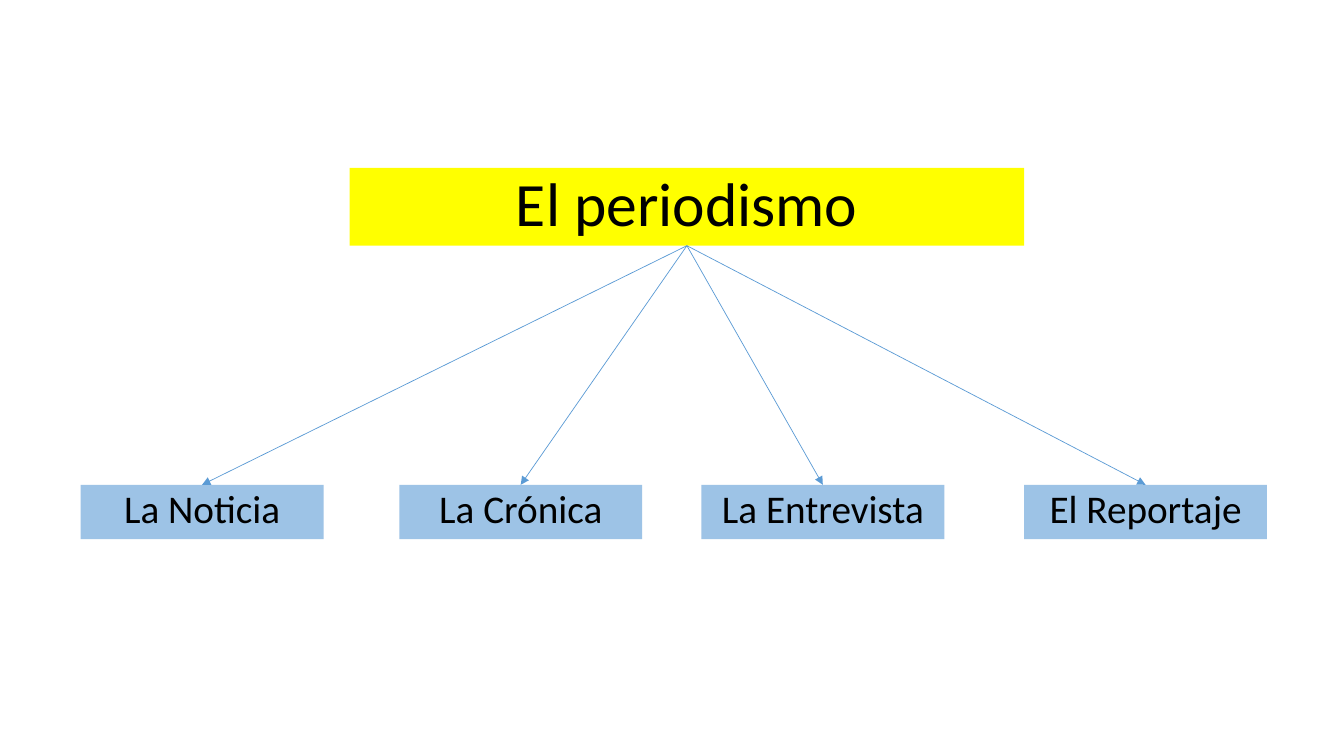
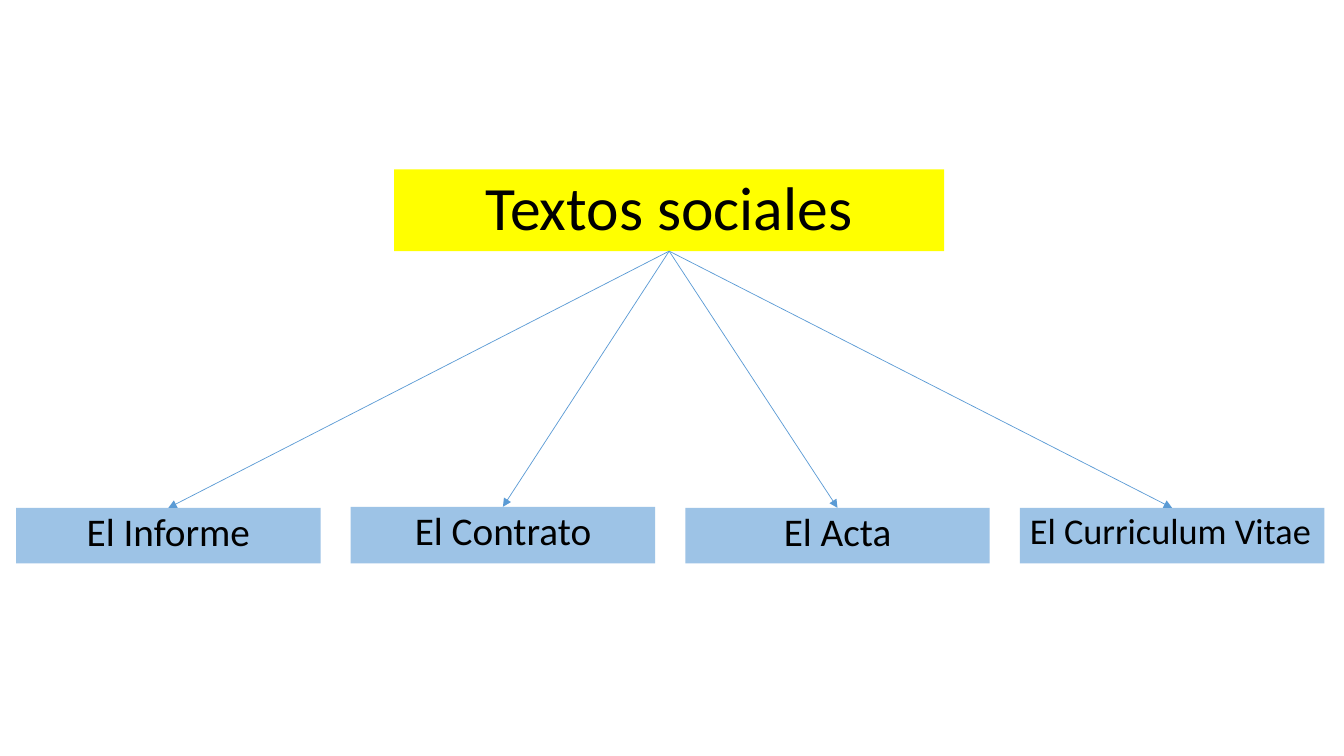
import pptx
import pptx.dml.color
import pptx.enum.shapes
import pptx.enum.text
import pptx.oxml.ns
import pptx.util
from lxml import etree

Pt = pptx.util.Pt
ALIGN = pptx.enum.text.PP_ALIGN
ANCHOR = pptx.enum.text.MSO_ANCHOR


def color(hex_string):
    return pptx.dml.color.RGBColor.from_string(hex_string)


class ConceptMap:
    """Holds the shared style and the slide being drawn."""

    FONT = "Calibri"
    TEXT = "000000"
    TITLE_FILL = "FFFF00"
    TOPIC_FILL = "9DC3E6"
    ARROW = "5B9BD5"
    TITLE_SIZE = 44
    TOPIC_SIZE = 28

    def __init__(self, presentation):
        self.presentation = presentation
        self.slide = None

    def add_slide(self):
        blank_layout = self.presentation.slide_layouts[6]
        self.slide = self.presentation.slides.add_slide(blank_layout)

    def box(self, text, bounds, fill, size, anchor, align=ALIGN.CENTER, space_before=0):
        shape = self.slide.shapes.add_shape(
            pptx.enum.shapes.MSO_SHAPE.RECTANGLE, *map(Pt, bounds))
        shape.shadow.inherit = False
        shape.fill.solid()
        shape.fill.fore_color.rgb = color(fill)
        shape.line.fill.background()
        frame = shape.text_frame
        frame.word_wrap = True
        frame.vertical_anchor = anchor
        paragraph = frame.paragraphs[0]
        paragraph.alignment = align
        paragraph.line_spacing = 0.9
        paragraph.space_before = Pt(space_before)
        run = paragraph.add_run()
        run.text = text
        run.font.name = self.FONT
        run.font.size = Pt(size)
        run.font.color.rgb = color(self.TEXT)
        return shape

    def title(self, text, bounds):
        return self.box(text, bounds, self.TITLE_FILL, self.TITLE_SIZE, ANCHOR.MIDDLE)

    def topic(self, text, bounds, size=TOPIC_SIZE, align=ALIGN.CENTER):
        return self.box(text, bounds, self.TOPIC_FILL, size, ANCHOR.TOP, align, 10)

    def arrow(self, parent, child):
        """Join the bottom of parent to the top of child."""
        connector = self.slide.shapes.add_connector(
            pptx.enum.shapes.MSO_CONNECTOR.STRAIGHT, 0, 0, 0, 0)
        connector.begin_connect(parent, 2)
        connector.end_connect(child, 0)
        connector.line.color.rgb = color(self.ARROW)
        connector.line.width = Pt(0.5)
        qn = pptx.oxml.ns.qn
        properties = connector._element.spPr
        line = properties.find(qn("a:ln"))
        etree.SubElement(line, qn("a:tailEnd"), type="triangle")
        etree.SubElement(properties, qn("a:effectLst"))

    def tree(self, title, title_bounds, topics):
        """Draw a slide with a title and an arrow to each topic."""
        self.add_slide()
        parent = self.title(title, title_bounds)
        children = [self.topic(*topic) for topic in topics]
        for child in children:
            self.arrow(parent, child)


def main():
    presentation = pptx.Presentation()
    presentation.slide_width = Pt(960)
    presentation.slide_height = Pt(540)
    concept_map = ConceptMap(presentation)

    genres = {"La Noticia": 57.6, "La Crónica": 285.2,
              "La Entrevista": 501, "El Reportaje": 731.5}
    concept_map.tree(
        "El periodismo", (249.8, 120, 481.7, 55.5),
        [(text, (left, 346.3, 173.5, 38.9)) for text, left in genres.items()])

    first_left, step, width, bottom = 11.5, 239, 217.5, 402.5
    documents = [("El Informe", 362.8), ("El Contrato", 362),
                 ("El Acta", 362.8), ("El Curriculum Vitae", 362.8, 25.9, ALIGN.LEFT)]
    concept_map.tree(
        "Textos sociales", (281.5, 121, 393, 58.4),
        [(text, (first_left + index * step, top, width, bottom - top), *style)
         for index, (text, top, *style) in enumerate(documents)])

    presentation.save("out.pptx")


if __name__ == "__main__":
    main()
